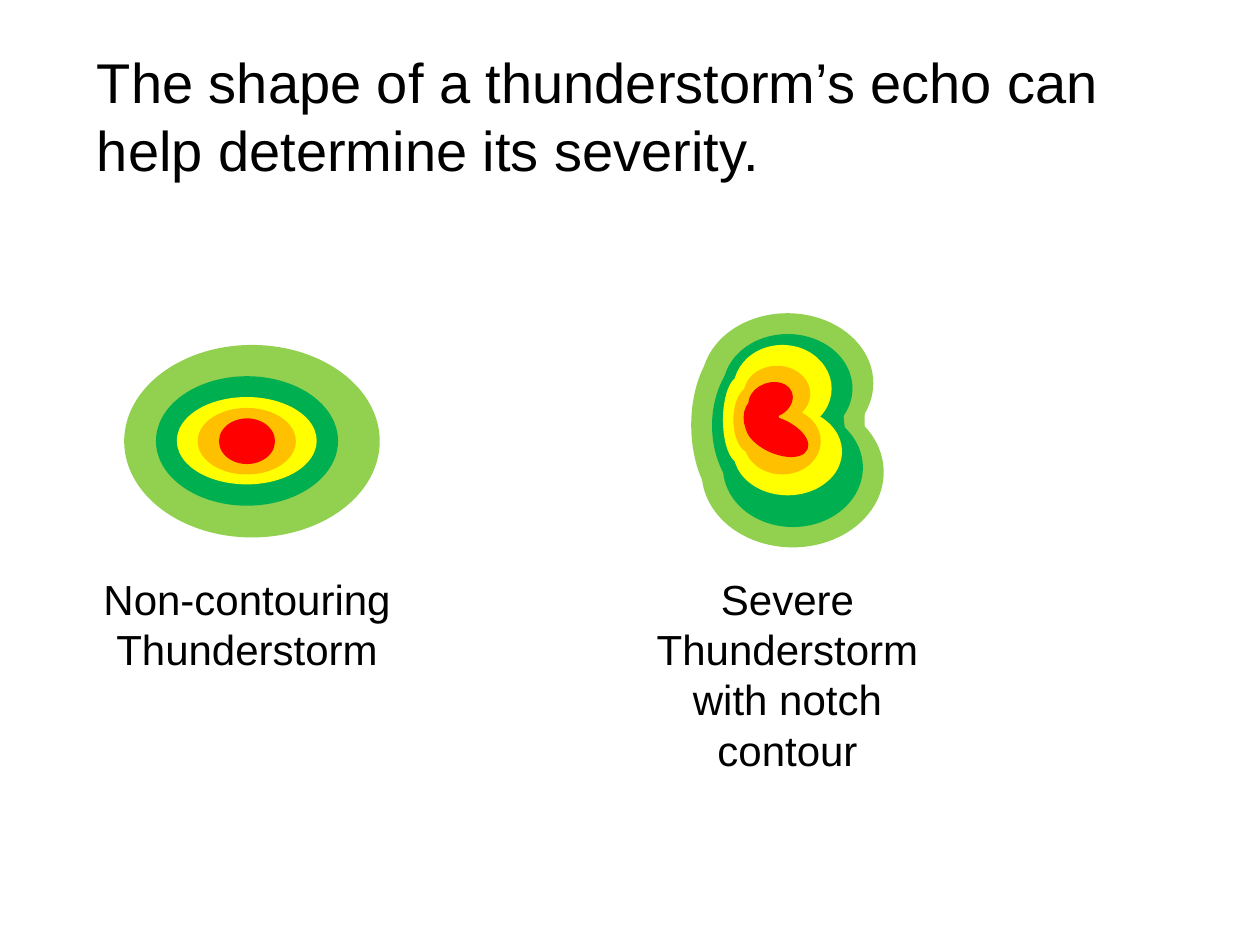
import pptx
import pptx.dml.color
import pptx.enum.shapes
import pptx.enum.text
import pptx.util

Cm = pptx.util.Cm
ALIGN = pptx.enum.text.PP_ALIGN
OVAL = pptx.enum.shapes.MSO_SHAPE.OVAL
NOTCH = pptx.enum.shapes.MSO_SHAPE.FLOWCHART_STORED_DATA

LIGHT_GREEN, GREEN, YELLOW, ORANGE, RED = "92D050", "00B050", "FFFF00", "FFC000", "FF0000"


def color(value):
    return pptx.dml.color.RGBColor.from_string(value)


def write_text(shape, text, size, alignment, box):
    """Place a text shape and fill it with one formatted paragraph."""
    shape.left, shape.top, shape.width, shape.height = map(Cm, box)
    frame = shape.text_frame
    frame.text = text
    frame_format = {
        "word_wrap": True,
        "auto_size": pptx.enum.text.MSO_AUTO_SIZE.SHAPE_TO_FIT_TEXT,
        "vertical_anchor": pptx.enum.text.MSO_ANCHOR.TOP,
    }
    for name, value in frame_format.items():
        setattr(frame, name, value)
    paragraph = frame.paragraphs[0]
    paragraph.alignment = alignment
    font = paragraph.runs[0].font
    for name, value in {"name": "Arial", "size": pptx.util.Pt(size)}.items():
        setattr(font, name, value)
    font.color.rgb = color("000000")


presentation = pptx.Presentation()
presentation.slide_width, presentation.slide_height = Cm(25.4), Cm(19.05)
slide = presentation.slides.add_slide(presentation.slide_layouts[5])

write_text(
    slide.shapes.title,
    "The shape of a thunderstorm’s echo can help determine its severity.",
    32, ALIGN.LEFT, (1.7, 0.84, 20.96, 3),
)

# Each part: colour, preset, left, top, width, height (cm), rotation (degrees)
non_contouring_echo = [
    (LIGHT_GREEN, OVAL, 2.54, 6.99, 5.08, 3.81, 0),
    (GREEN, OVAL, 3.18, 7.62, 3.6, 2.54, 0),
    (YELLOW, OVAL, 3.6, 8.04, 2.75, 1.69, 0),
    (ORANGE, OVAL, 4.02, 8.26, 1.91, 1.27, 0),
    (RED, OVAL, 4.45, 8.47, 1.06, 0.85, 0),
]
severe_echo = [
    (LIGHT_GREEN, OVAL, 14.18, 6.35, 3.39, 2.75, 0),
    (LIGHT_GREEN, OVAL, 13.97, 6.77, 2.12, 3.6, 0),
    (LIGHT_GREEN, OVAL, 14.18, 8.04, 3.6, 2.96, 0),
    (LIGHT_GREEN, NOTCH, 16.51, 7.62, 1.06, 1.91, 0),
    (GREEN, OVAL, 14.61, 6.77, 2.54, 2.12, 0),
    (GREEN, OVAL, 14.61, 8.26, 2.75, 2.33, 0),
    (GREEN, OVAL, 14.39, 6.99, 2.33, 3.18, 0),
    (GREEN, NOTCH, 16.09, 7.83, 1.06, 1.06, 0),
    (YELLOW, OVAL, 14.82, 6.99, 1.91, 1.69, 0),
    (YELLOW, OVAL, 14.82, 8.26, 2.12, 1.69, 0),
    (YELLOW, OVAL, 14.61, 7.62, 0.64, 1.69, 0),
    (ORANGE, OVAL, 15.03, 7.41, 1.27, 1.06, 0),
    (ORANGE, OVAL, 15.03, 8.26, 1.48, 1.27, 0),
    (ORANGE, OVAL, 14.82, 7.83, 0.64, 1.27, 0),
    (RED, OVAL, 15.11, 7.75, 0.85, 0.64, 339.3),
    (RED, OVAL, 15.03, 8.47, 1.27, 0.64, 23.8),
    (RED, OVAL, 15.03, 8.04, 0.64, 0.85, 349.4),
]
storms = [
    (non_contouring_echo, "Non-contouring Thunderstorm", (1.7, 11.43, 6.56, 2.31)),
    (severe_echo, "Severe Thunderstorm with notch contour", (12.7, 11.43, 6.35, 4.37)),
]

for echo, caption, caption_box in storms:
    for fill, preset, left, top, width, height, rotation in echo:
        shape = slide.shapes.add_shape(preset, Cm(left), Cm(top), Cm(width), Cm(height))
        shape.rotation = rotation
        shape.shadow.inherit = False
        shape.fill.solid()
        shape.fill.fore_color.rgb = color(fill)
        shape.line.color.rgb = color(fill)
        shape.line.width = pptx.util.Pt(2)
    caption_shape = slide.shapes.add_textbox(*map(Cm, caption_box))
    write_text(caption_shape, caption, 24, ALIGN.CENTER, caption_box)

presentation.save("out.pptx")
